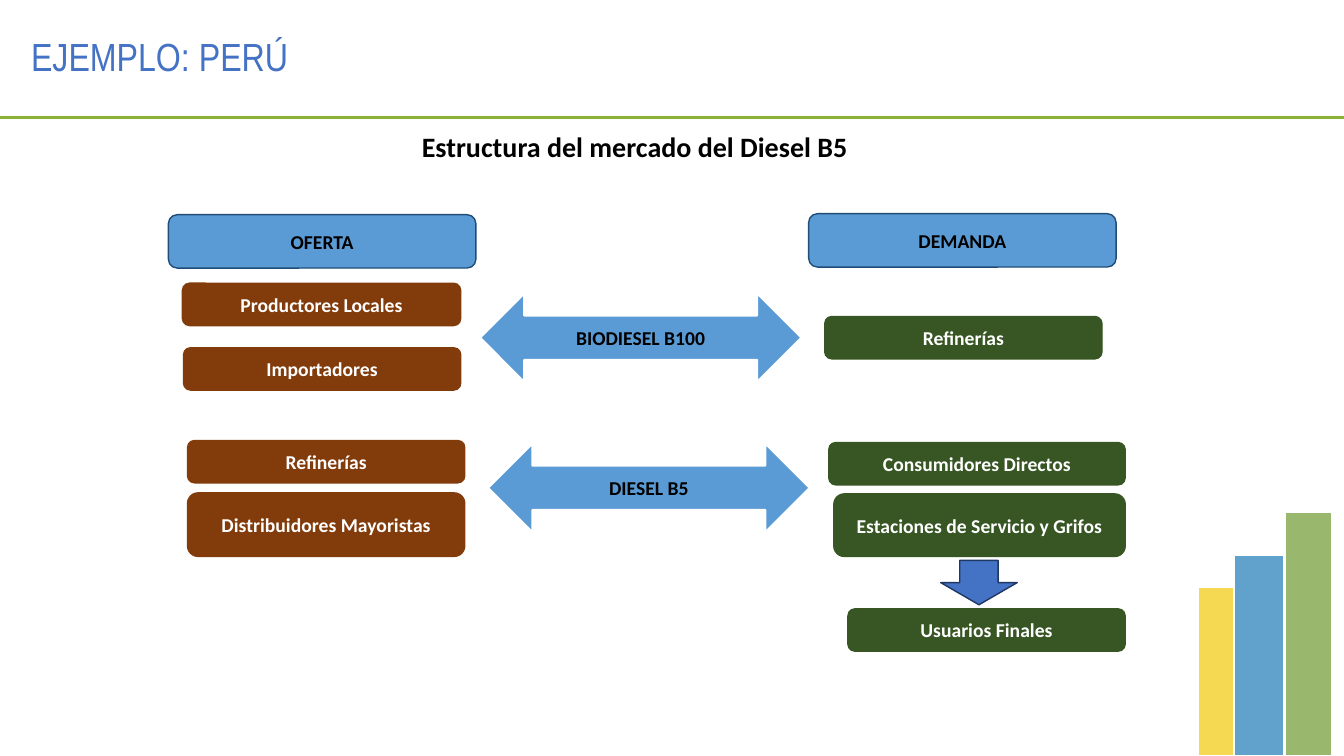
import pptx
import pptx.util
import pptx.dml.color
import pptx.enum.shapes
import pptx.enum.text
import pptx.oxml.ns
import lxml.etree

Inches = pptx.util.Inches
Pt = pptx.util.Pt
KIND = pptx.enum.shapes.MSO_SHAPE
ANCHOR = pptx.enum.text.MSO_ANCHOR
ALIGN = pptx.enum.text.PP_ALIGN

COLORS = {
    "white": "FFFFFF", "black": "000000", "title": "4472C4", "rule": "8BB236",
    "sky": "5B9BD5", "navy": "1F4D78", "brown": "823B0B", "green": "375623",
    "blue": "4472C4", "edge": "1F3763",
    "leaf": "61911B", "sea": "006AAF", "sun": "F3C700",
}

# Content
TITLE = "EJEMPLO: PERÚ"
HEADING = "Estructura del mercado del Diesel B5"
# style: shape, fill, line, line width, text colour
STYLES = {
    "head": (KIND.ROUNDED_RECTANGLE, "sky", "navy", 1, "black"),
    "supply": (KIND.ROUNDED_RECTANGLE, "brown", "brown", 1, "white"),
    "demand": (KIND.ROUNDED_RECTANGLE, "green", "green", 1, "white"),
    "flow": (KIND.LEFT_RIGHT_ARROW, "sky", "white", 1.5, "black"),
}
# style, text, left, top, width, height
MARKET = [
    ("flow", "BIODIESEL B100", 4.76, 2.91, 3.19, 0.88),
    ("head", "OFERTA", 1.67, 2.13, 3.05, 0.53),
    ("head", "DEMANDA", 8.02, 2.12, 3.05, 0.53),
    ("supply", "Productores Locales", 1.81, 2.81, 2.76, 0.42),
    ("supply", "Importadores", 1.82, 3.45, 2.75, 0.42),
    ("demand", "Refinerías", 8.18, 3.14, 2.75, 0.42),
    ("flow", "DIESEL B5", 4.84, 4.4, 3.19, 0.88),
    ("supply", "Refinerías", 1.86, 4.37, 2.75, 0.42),
    ("supply", "Distribuidores Mayoristas", 1.86, 4.89, 2.75, 0.63),
    ("demand", "Consumidores Directos", 8.22, 4.39, 2.94, 0.42),
    ("demand", "Estaciones de Servicio y Grifos", 8.27, 4.9, 2.89, 0.62),
    ("demand", "Usuarios Finales", 8.41, 6.04, 2.75, 0.42),
]
# colour, left, width, height, opacity in percent
BARS = [
    ("leaf", 12.75, 0.46, 2.42, 64),
    ("sea", 12.24, 0.49, 1.99, 62),
    ("sun", 11.89, 0.34, 1.67, 68),
]
WIDE, HIGH = 13.33, 7.5

deck = pptx.Presentation()
deck.slide_width, deck.slide_height = Inches(WIDE), Inches(HIGH)
slide = deck.slides.add_slide(deck.slide_layouts[6])


def color(name):
    return pptx.dml.color.RGBColor.from_string(COLORS[name])


def add_box(kind, place, fill, line=None, width=1):
    box = slide.shapes.add_shape(kind, *map(Inches, place))
    box.shadow.inherit = False
    box.fill.solid()
    box.fill.fore_color.rgb = color(fill)
    if line:
        box.line.color.rgb = color(line)
        box.line.width = Pt(width)
    else:
        box.line.fill.background()
    return box


def add_text(box, text, size, shade, font="Calibri", bold=True):
    para = box.text_frame.paragraphs[0]
    para.text = text
    run = para.runs[0].font
    run.name, run.size, run.bold = font, Pt(size), bold
    run.color.rgb = color(shade)
    return para


def add_label(box, text, size, shade, anchor):
    box.text_frame.word_wrap = True
    box.text_frame.vertical_anchor = anchor
    para = add_text(box, text, size, shade)
    para.alignment = ALIGN.CENTER
    para.space_after = Pt(10)


# Rule under the title
rule = slide.shapes.add_connector(
    pptx.enum.shapes.MSO_CONNECTOR.STRAIGHT,
    0, Inches(1.17), Inches(WIDE), Inches(1.17))
rule.line.color.rgb = color("rule")
rule.line.width = Pt(2.25)
lxml.etree.SubElement(rule._element.spPr, pptx.oxml.ns.qn("a:effectLst"))

# Corner bars, standing on the bottom edge
for fill, left, width, height, clear in BARS:
    bar = add_box(KIND.RECTANGLE, (left, HIGH - height, width, height),
                  fill, "white", 0.75)
    tint = bar._element.spPr.find(
        pptx.oxml.ns.qn("a:solidFill") + "/" + pptx.oxml.ns.qn("a:srgbClr"))
    alpha = lxml.etree.SubElement(tint, pptx.oxml.ns.qn("a:alpha"))
    alpha.set("val", str(clear * 1000))

# Title and heading
title = slide.shapes.add_textbox(*map(Inches, (0.21, 0.27, 2.78, 0.57)))
title.text_frame.word_wrap = False
title.text_frame.auto_size = pptx.enum.text.MSO_AUTO_SIZE.SHAPE_TO_FIT_TEXT
add_text(title, TITLE, 28, "title", "Arial Narrow", False)

heading = add_box(KIND.RECTANGLE, (2.32, 1.24, 7.95, 0.39), "white")
add_label(heading, HEADING, 20, "black", ANCHOR.TOP)

# Market boxes and flows
for style, text, *place in MARKET:
    kind, fill, line, width, shade = STYLES[style]
    box = add_box(kind, place, fill, line, width)
    add_label(box, text, 14, shade, ANCHOR.MIDDLE)

# Arrow to the end users
add_box(KIND.DOWN_ARROW, (9.33, 5.56, 0.76, 0.44), "blue", "edge")

deck.save("out.pptx")
